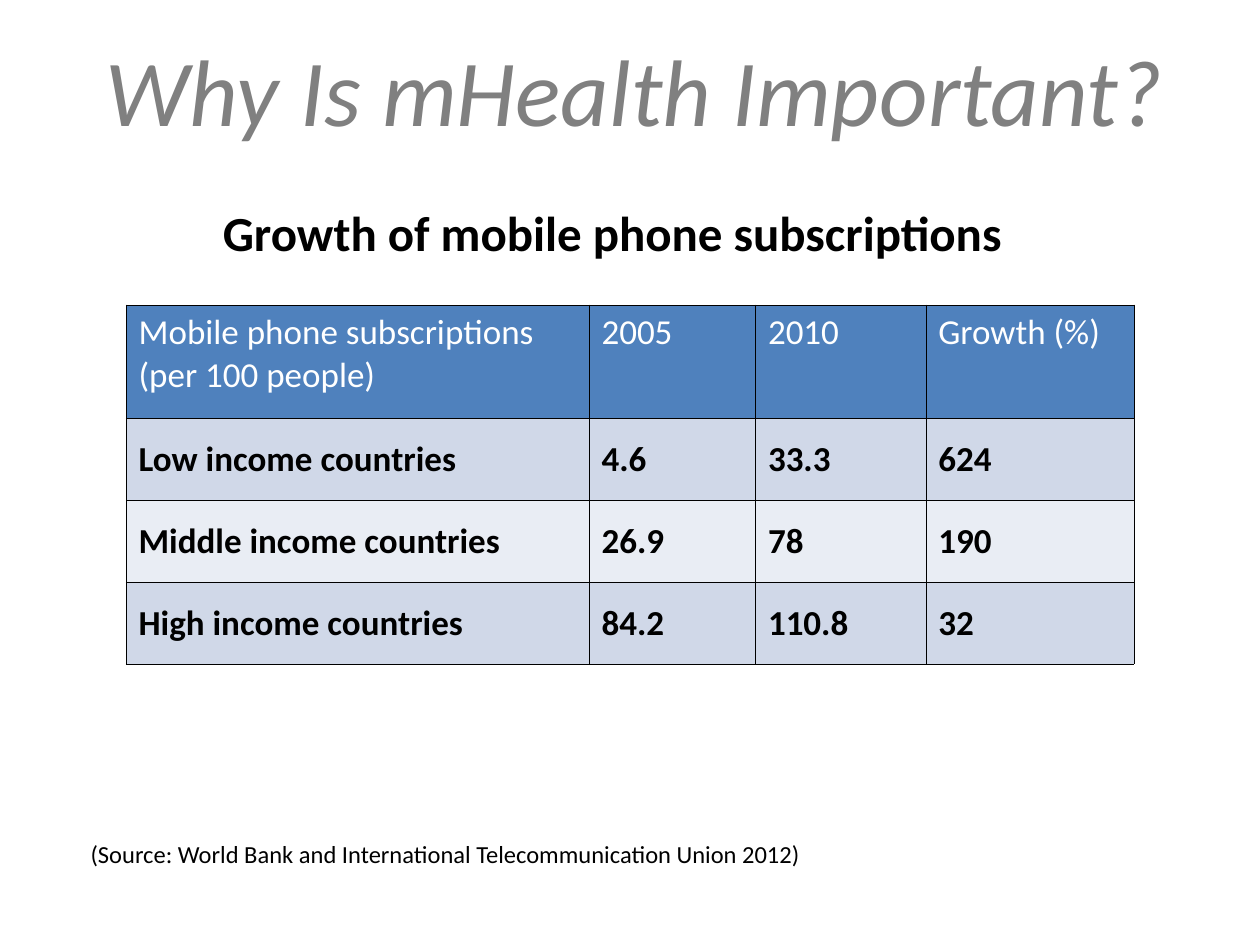
from dataclasses import dataclass

from lxml.etree import SubElement
from pptx import Presentation
from pptx.dml.color import RGBColor
from pptx.enum.text import MSO_ANCHOR, PP_ALIGN
from pptx.oxml.ns import qn
from pptx.util import Inches, Pt


@dataclass(frozen=True)
class Theme:
    font: str = "Calibri"
    title: str = "808080"
    text: str = "000000"
    head_text: str = "FFFFFF"
    head_fill: str = "4F81BD"
    bands: tuple = ("D0D8E8", "E9EDF4")
    border: str = "000000"
    border_pt: float = 0.25
    title_pt: int = 54
    subtitle_pt: int = 28
    table_pt: int = 20
    source_pt: int = 14


THEME = Theme()
SLIDE_W, SLIDE_H = 10, 7.5
COL_WIDTHS = (3.67, 1.32, 1.35, 1.65)
ROW_HEIGHTS = (0.9, 0.65, 0.65, 0.65)
ROWS = (
    ("Mobile phone subscriptions (per 100 people)", "2005", "2010", "Growth (%)"),
    ("Low income countries", "4.6", "33.3", "624"),
    ("Middle income countries", "26.9", "78", "190"),
    ("High income countries", "84.2", "110.8", "32"),
)


def add_run(p, text, size, color, bold=False, italic=False):
    r = p.add_run()
    r.text = text
    r.font.name = THEME.font
    r.font.size = Pt(size)
    r.font.bold = bold
    r.font.italic = italic
    r.font.color.rgb = RGBColor.from_string(color)


def add_title(slide, box, text):
    sp = slide.shapes.title
    sp.left, sp.top, sp.width, sp.height = map(Inches, box)
    tf = sp.text_frame
    tf.vertical_anchor = MSO_ANCHOR.MIDDLE
    p = tf.paragraphs[0]
    p.alignment = PP_ALIGN.RIGHT
    add_run(p, text, THEME.title_pt, THEME.title, italic=True)


def add_label(slide, box, text, size, bold=False):
    tf = slide.shapes.add_textbox(*map(Inches, box)).text_frame
    tf.word_wrap = True
    add_run(tf.paragraphs[0], text, size, THEME.text, bold)


def set_borders(cell):
    tc_pr = cell._tc.get_or_add_tcPr()
    for i, side in enumerate(("lnL", "lnR", "lnT", "lnB")):
        ln = SubElement(tc_pr, qn(f"a:{side}"), w=str(Pt(THEME.border_pt)))
        fill = SubElement(ln, qn("a:solidFill"))
        SubElement(fill, qn("a:srgbClr"), val=THEME.border)
        tc_pr.insert(i, ln)


def add_growth_table(slide, box):
    table = slide.shapes.add_table(len(ROWS), len(COL_WIDTHS), *map(Inches, box)).table
    for col, share in zip(table.columns, COL_WIDTHS):
        col.width = Inches(box[2] * share / sum(COL_WIDTHS))
    for row, share in zip(table.rows, ROW_HEIGHTS):
        row.height = Inches(box[3] * share / sum(ROW_HEIGHTS))
    for i, values in enumerate(ROWS):
        head = i == 0
        fill = THEME.head_fill if head else THEME.bands[(i - 1) % 2]
        color = THEME.head_text if head else THEME.text
        for j, value in enumerate(values):
            cell = table.cell(i, j)
            cell.fill.solid()
            cell.fill.fore_color.rgb = RGBColor.from_string(fill)
            cell.vertical_anchor = MSO_ANCHOR.TOP if head else MSO_ANCHOR.MIDDLE
            set_borders(cell)
            add_run(cell.text_frame.paragraphs[0], value, THEME.table_pt, color, not head)


def main():
    prs = Presentation()
    prs.slide_width, prs.slide_height = Inches(SLIDE_W), Inches(SLIDE_H)
    slide = prs.slides.add_slide(prs.slide_layouts[5])
    add_title(slide, (0.5, 0.08, 9, 1.25), "Why Is mHealth Important? ")
    add_growth_table(slide, (1, 2.42, 8, 2.85))
    add_label(slide, (1.67, 1.56, 6.67, 0.57),
              "Growth of mobile phone subscriptions", THEME.subtitle_pt, bold=True)
    add_label(slide, (0.62, 6.61, 6.05, 0.34),
              "(Source: World Bank and International Telecommunication Union 2012)",
              THEME.source_pt)
    prs.save("out.pptx")


if __name__ == "__main__":
    main()
